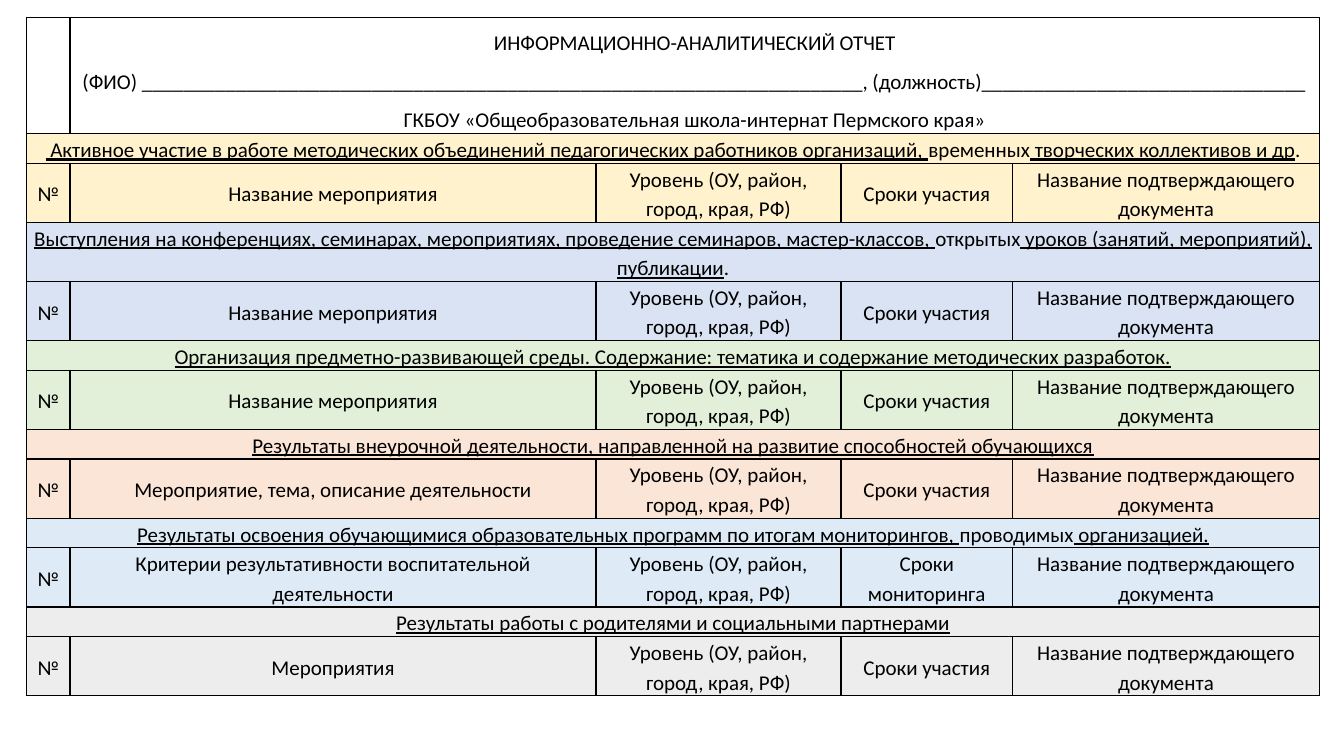
from dataclasses import dataclass

from lxml.etree import SubElement
from pptx import Presentation
from pptx.dml.color import RGBColor
from pptx.enum.text import MSO_ANCHOR, PP_ALIGN
from pptx.oxml.ns import qn
from pptx.table import _Cell
from pptx.util import Pt

COLORS = {
    "black": "000000",
    "yellow": "FFF2CC",
    "blue": "DAE3F3",
    "green": "E2F0D9",
    "orange": "FBE5D6",
    "sky": "DEEBF7",
    "gray": "EDEDED",
}
COL_WIDTHS = [31, 375.8, 175, 122.5, 219.3]
HEADER_H, TITLE_H, LABELS_H = 80, 17.5, 34
HEADER = [
    "ИНФОРМАЦИОННО-АНАЛИТИЧЕСКИЙ ОТЧЕТ",
    "(ФИО) " + "_" * 69 + ", (должность)" + "_" * 31,
    "ГКБОУ «Общеобразовательная школа-интернат Пермского края»",
]


@dataclass
class Section:
    """The title alternates underlined and plain parts, underlined first."""
    color: str
    title: list[str]
    activity: str = "Название мероприятия"
    dates: str = "Сроки участия"
    anchor: MSO_ANCHOR = MSO_ANCHOR.TOP
    title_h: float = TITLE_H

    def labels(self) -> list[str]:
        return ["№", self.activity, "Уровень (ОУ, район, город, края, РФ)",
                self.dates, "Название подтверждающего документа"]


SECTIONS = [
    Section("yellow", [
        " Активное участие в работе методических объединений педагогических работников организаций, ",
        "временных", " творческих коллективов и др", "."]),
    Section("blue", [
        "Выступления на конференциях, семинарах, мероприятиях, проведение семинаров, мастер-классов, ",
        "открытых", " уроков (занятий, мероприятий), публикации", "."], title_h=39),
    Section("green", [
        "Организация предметно-развивающей среды. Содержание: тематика и содержание методических разработок."]),
    Section("orange", [
        "Результаты внеурочной деятельности, направленной на развитие способностей обучающихся"],
        activity="Мероприятие, тема, описание деятельности", anchor=MSO_ANCHOR.BOTTOM),
    Section("sky", [
        "Результаты освоения обучающимися образовательных программ по итогам мониторингов, ",
        "проводимых", " организацией."],
        activity="Критерии результативности воспитательной деятельности",
        dates="Сроки мониторинга", anchor=MSO_ANCHOR.BOTTOM),
    Section("gray", ["Результаты работы с родителями и социальными партнерами"],
            activity="Мероприятия", anchor=MSO_ANCHOR.MIDDLE),
]


def set_borders(cell: _Cell) -> None:
    tcPr = cell._tc.get_or_add_tcPr()
    for side in ("lnL", "lnR", "lnT", "lnB"):
        ln = SubElement(tcPr, qn(f"a:{side}"), w=str(Pt(1)))
        fill = SubElement(ln, qn("a:solidFill"))
        SubElement(fill, qn("a:srgbClr"), val=COLORS["black"])


def set_fill(cell: _Cell, color: str) -> None:
    cell.fill.solid()
    cell.fill.fore_color.rgb = RGBColor.from_string(COLORS[color])


def write(cell: _Cell, paragraphs: list[list[str]], *, spacing: float = 1.15,
          anchor: MSO_ANCHOR = MSO_ANCHOR.MIDDLE, underline: bool = False) -> None:
    """Write paragraphs of runs; underline applies to every other run."""
    cell.vertical_anchor = anchor
    cell.margin_left = cell.margin_right = Pt(4.3)
    cell.margin_top = cell.margin_bottom = Pt(0)
    tf = cell.text_frame
    for i, parts in enumerate(paragraphs):
        p = tf.add_paragraph() if i else tf.paragraphs[0]
        p.alignment = PP_ALIGN.CENTER
        p.line_spacing = spacing
        for j, text in enumerate(parts):
            r = p.add_run()
            r.text = text
            r.font.name = "Calibri"
            r.font.size = Pt(15)
            r.font.color.rgb = RGBColor.from_string(COLORS["black"])
            r.font.underline = underline and j % 2 == 0


def main() -> None:
    prs = Presentation()
    prs.slide_width, prs.slide_height = Pt(960), Pt(540)
    s = prs.slides.add_slide(prs.slide_layouts[6])

    heights = [HEADER_H]
    for section in SECTIONS:
        heights += [section.title_h, LABELS_H]
    frame = s.shapes.add_table(len(heights), len(COL_WIDTHS), Pt(19), Pt(12.7),
                               Pt(sum(COL_WIDTHS)), Pt(sum(heights)))
    table = frame.table
    table.first_row = table.horz_banding = False
    for column, width in zip(table.columns, COL_WIDTHS):
        column.width = Pt(width)
    for row, height in zip(table.rows, heights):
        row.height = Pt(height)
    for cell in table.iter_cells():
        set_borders(cell)
        cell.fill.background()

    last = len(COL_WIDTHS) - 1
    table.cell(0, 1).merge(table.cell(0, last))
    write(table.cell(0, 1), [[line] for line in HEADER], spacing=1.5,
          anchor=MSO_ANCHOR.BOTTOM)
    for i, section in enumerate(SECTIONS):
        row = 1 + 2 * i
        title = table.cell(row, 0)
        title.merge(table.cell(row, last))
        set_fill(title, section.color)
        write(title, [section.title], anchor=section.anchor, underline=True)
        for col, label in enumerate(section.labels()):
            cell = table.cell(row + 1, col)
            set_fill(cell, section.color)
            write(cell, [[label]])
    frame.height = Pt(474.5)

    prs.save("out.pptx")


if __name__ == "__main__":
    main()
